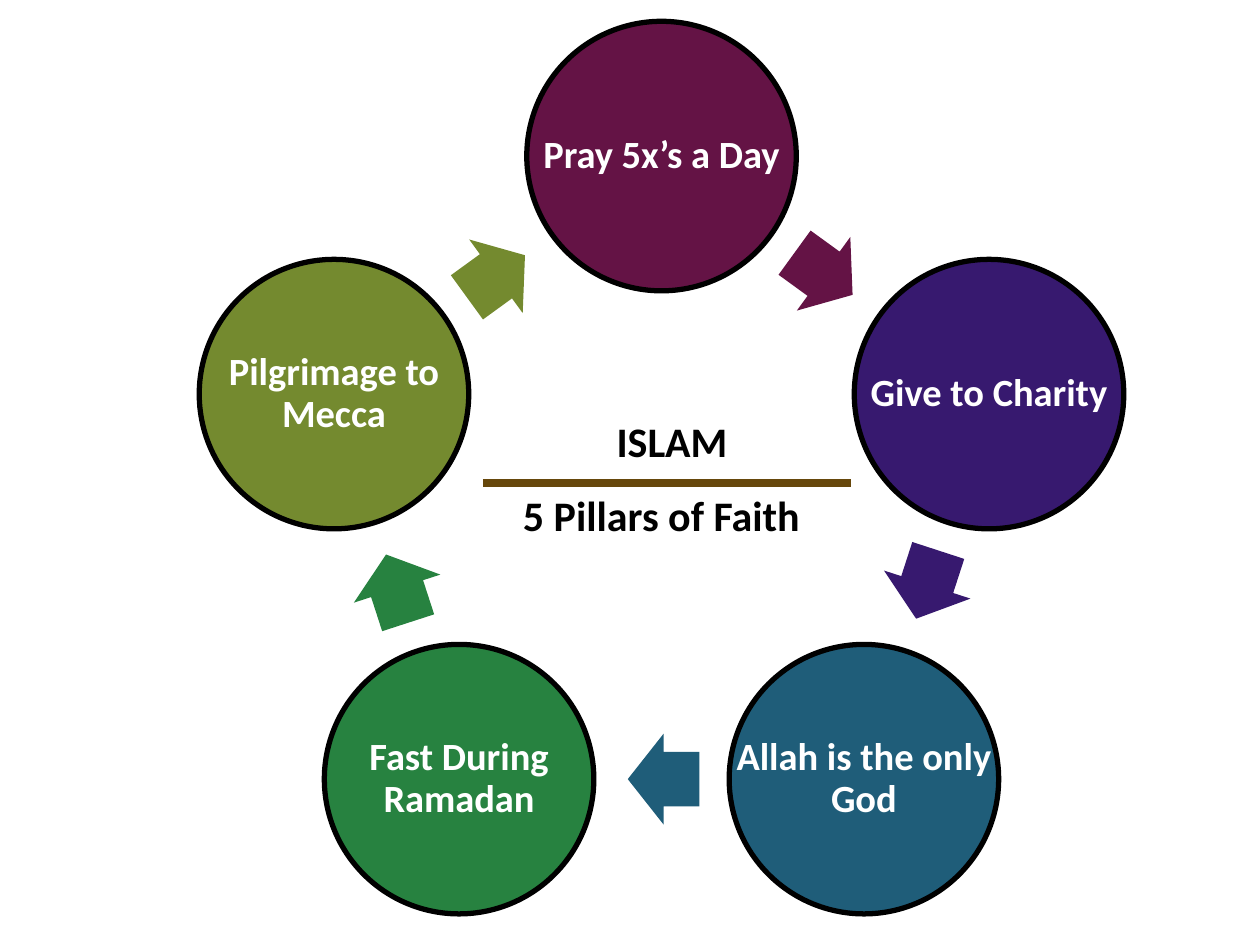
from math import cos, sin, radians, hypot, atan2, degrees

from lxml.etree import SubElement
from pptx import Presentation
from pptx.dml.color import RGBColor
from pptx.enum.shapes import MSO_CONNECTOR as Link, MSO_SHAPE as Form
from pptx.enum.text import MSO_ANCHOR as Anchor, MSO_AUTO_SIZE as Fit, PP_ALIGN as Align
from pptx.oxml.ns import qn
from pptx.util import Pt

HUES = {
    "plum": "641345", "violet": "37196F", "teal": "1F5D79",
    "green": "278240", "olive": "748A2F",
    "brown": "66470B", "black": "000000", "white": "FFFFFF",
}
PILLARS = [
    ("Pray 5x’s a Day", "plum"),
    ("Give to Charity", "violet"),
    ("Allah is the only God", "teal"),
    ("Fast During Ramadan", "green"),
    ("Pilgrimage to Mecca", "olive"),
]
DISC = 154
ARROW = (41, 52)
BACK = 1.2  # arrows sit slightly behind the middle of each gap


def rgb(hue):
    return RGBColor.from_string(HUES[hue])


def points(*values):
    return [Pt(v) for v in values]


def add_text(slide, box, text, size, hue, para_fmt=None, **frame_fmt):
    frame = slide.shapes.add_textbox(*points(*box)).text_frame
    for name, value in {"word_wrap": True, **frame_fmt}.items():
        setattr(frame, name, value)
    para = frame.paragraphs[0]
    para.text = text
    for name, value in {"alignment": Align.CENTER, **(para_fmt or {})}.items():
        setattr(para, name, value)
    font = para.runs[0].font
    for name, value in {"name": "Calibri", "size": Pt(size), "bold": True}.items():
        setattr(font, name, value)
    font.color.rgb = rgb(hue)


def add_solid(slide, form, box, hue):
    shape = slide.shapes.add_shape(form, *points(*box))
    shape.shadow.inherit = False
    shape.fill.solid()
    shape.fill.fore_color.rgb = rgb(hue)
    return shape


def add_disc(slide, box, text, hue):
    disc = add_solid(slide, Form.OVAL, box, hue)
    disc.line.color.rgb = rgb("black")
    disc.line.width = Pt(3)
    inset = {f"margin_{side}": Pt(2) for side in ("left", "top", "right", "bottom")}
    add_text(slide, box, text, 22, "white", {"line_spacing": 0.9},
             vertical_anchor=Anchor.MIDDLE, **inset)


def add_arrow(slide, start, end, hue):
    """Place an arrow in the gap between two disc centres."""
    (x1, y1), (x2, y2) = start, end
    dx, dy = x2 - x1, y2 - y1
    shift = 0.5 - BACK / hypot(dx, dy)
    wide, high = ARROW
    box = (x1 + shift * dx - wide / 2, y1 + shift * dy - high / 2, wide, high)
    arrow = add_solid(slide, Form.RIGHT_ARROW, box, hue)
    arrow.line.fill.background()
    arrow.adjustments[0], arrow.adjustments[1] = 0.6, 0.5
    arrow.rotation = round(degrees(atan2(dy, dx))) % 360


def add_ring(slide, mid_x, mid_y, radius):
    """Place the pillars clockwise from the top, with arrows between them."""
    count = len(PILLARS)
    turns = [radians(360 / count * i) for i in range(count)]
    spots = [(mid_x + radius * sin(t), mid_y - radius * cos(t)) for t in turns]
    for i, (text, hue) in enumerate(PILLARS):
        x, y = spots[i]
        add_disc(slide, (x - DISC / 2, y - DISC / 2, DISC, DISC), text, hue)
        add_arrow(slide, spots[i], spots[(i + 1) % count], hue)


def add_centre(slide, left, top, width):
    """Place the heading, the rule at the given top, and the line below it."""
    rule = slide.shapes.add_connector(
        Link.STRAIGHT, *points(left, top, left + width, top))
    rule.line.color.rgb = rgb("brown")
    rule.line.width = Pt(4.5)
    SubElement(rule._element.spPr, qn("a:effectLst"))
    for text, dx, dy in (("5 Pillars of Faith", 12, 0), ("ISLAM", 18, -42)):
        add_text(slide, (left + dx, top + dy, 180, 36), text, 24, "black",
                 auto_size=Fit.SHAPE_TO_FIT_TEXT)


def main():
    deck = Presentation()
    deck.slide_width, deck.slide_height = points(720, 540)
    slide = deck.slides.add_slide(deck.slide_layouts[6])
    add_ring(slide, 378, 286, 196.8)
    add_centre(slide, 276, 276, 210)
    deck.save("out.pptx")


if __name__ == "__main__":
    main()
